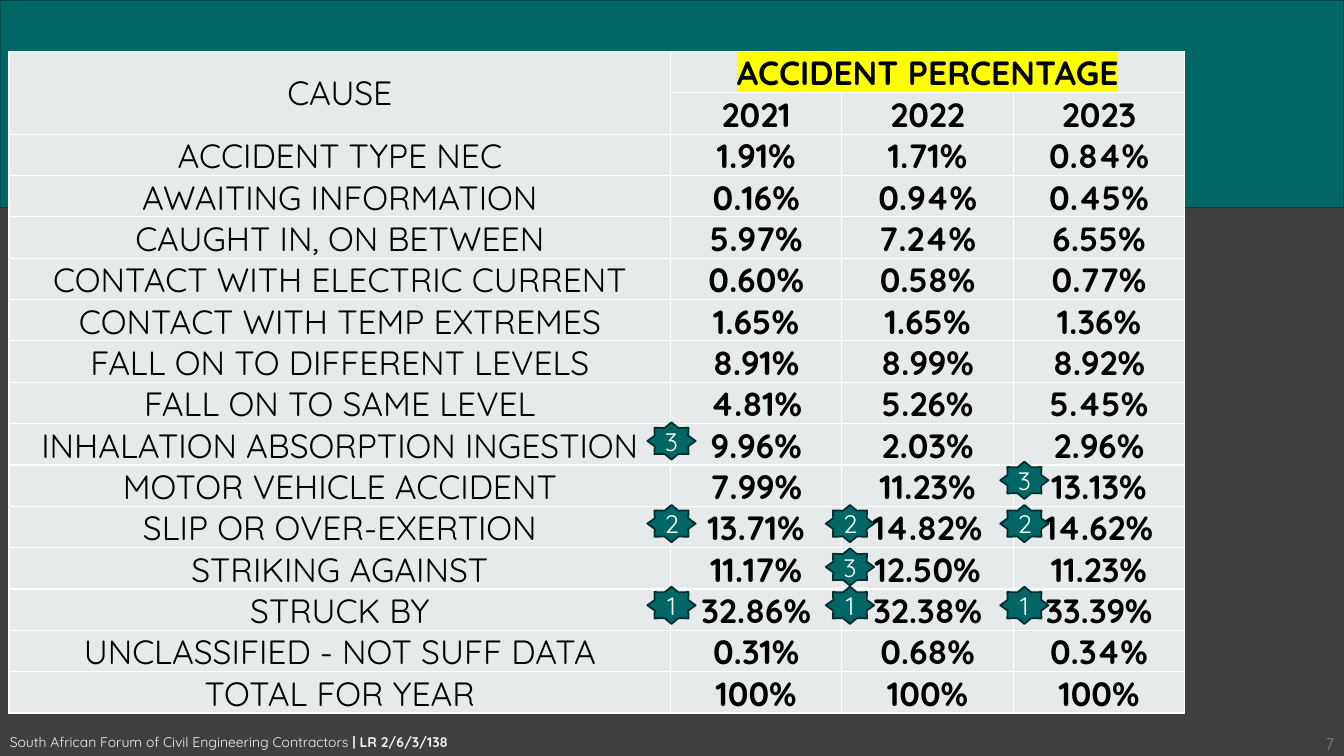
from typing import NamedTuple

from lxml.etree import SubElement
from pptx import Presentation
from pptx.dml.color import RGBColor
from pptx.enum.shapes import MSO_SHAPE
from pptx.enum.text import MSO_ANCHOR, PP_ALIGN
from pptx.oxml import parse_xml
from pptx.oxml.ns import nsdecls, qn
from pptx.util import Inches, Pt

FONT = "Quicksand"
TEAL = "006666"


class Cause(NamedTuple):
    label: str
    percentages: tuple[str, str, str]


class Badge(NamedTuple):
    rank: str
    left: float
    top: float


YEARS = ("2021", "2022", "2023")
CAUSES = [
    Cause("ACCIDENT TYPE NEC", ("1.91%", "1.71%", "0.84%")),
    Cause("AWAITING INFORMATION", ("0.16%", "0.94%", "0.45%")),
    Cause("CAUGHT IN, ON BETWEEN", ("5.97%", "7.24%", "6.55%")),
    Cause("CONTACT WITH ELECTRIC CURRENT", ("0.60%", "0.58%", "0.77%")),
    Cause("CONTACT WITH TEMP EXTREMES", ("1.65%", "1.65%", "1.36%")),
    Cause("FALL ON TO DIFFERENT LEVELS", ("8.91%", "8.99%", "8.92%")),
    Cause("FALL ON TO SAME LEVEL", ("4.81%", "5.26%", "5.45%")),
    Cause("INHALATION ABSORPTION INGESTION", ("9.96%", "2.03%", "2.96%")),
    Cause("MOTOR VEHICLE ACCIDENT", ("7.99%", "11.23%", "13.13%")),
    Cause("SLIP OR OVER-EXERTION", ("13.71%", "14.82%", "14.62%")),
    Cause("STRIKING AGAINST", ("11.17%", "12.50%", "11.23%")),
    Cause("STRUCK BY", ("32.86%", "32.38%", "33.39%")),
    Cause("UNCLASSIFIED - NOT SUFF DATA", ("0.31%", "0.68%", "0.34%")),
    Cause("TOTAL FOR YEAR", ("100%", "100%", "100%")),
]

# Tops of ranks 1, 2 and 3 in each year's column
BADGE_COLUMNS = {
    6.42: (5.82, 5.01, 4.19),
    8.19: (5.82, 5.01, 5.44),
    9.92: (5.82, 5.01, 4.58),
}
BADGES = [
    Badge(str(rank), left, top)
    for left, tops in BADGE_COLUMNS.items()
    for rank, top in enumerate(tops, start=1)
]


def color(value: str) -> RGBColor:
    return RGBColor.from_string(value)


def paint(shape, fill: str, line: str, width: float) -> None:
    shape.shadow.inherit = False
    shape.fill.solid()
    shape.fill.fore_color.rgb = color(fill)
    shape.line.color.rgb = color(line)
    shape.line.width = Pt(width)


def style_run(run, size: float, text_color: str, bold: bool = False) -> None:
    run.font.name = FONT
    run.font.size = Pt(size)
    run.font.bold = bold
    run.font.color.rgb = color(text_color)


def highlight(run, value: str) -> None:
    mark = parse_xml(f'<a:highlight {nsdecls("a")}><a:srgbClr val="{value}"/></a:highlight>')
    run.font._element.find(qn("a:latin")).addprevious(mark)


def add_borders(cell, value: str, width: float) -> None:
    properties = cell._tc.get_or_add_tcPr()
    for side in ("a:lnL", "a:lnR", "a:lnT", "a:lnB"):
        border = SubElement(properties, qn(side), w=str(Pt(width)))
        SubElement(SubElement(border, qn("a:solidFill")), qn("a:srgbClr"), val=value)


def fill_cell(cell, text: str, bold: bool) -> None:
    add_borders(cell, "FFFFFF", 1)
    cell.fill.solid()
    cell.fill.fore_color.rgb = color("E7EAEA")
    cell.vertical_anchor = MSO_ANCHOR.MIDDLE
    cell.margin_left = cell.margin_right = cell.margin_top = Inches(0.01)
    cell.margin_bottom = 0
    if text:
        paragraph = cell.text_frame.paragraphs[0]
        paragraph.text = text
        paragraph.alignment = PP_ALIGN.CENTER
        style_run(paragraph.runs[0], 24, "000000", bold)


def add_banner(slide) -> None:
    outline = [(0, 0), (0, 2.06), (2.18, 2.06), (2.6, 2.38), (2.65, 2.39),
               (2.7, 2.38), (3.11, 2.06), (13.33, 2.06)]
    builder = slide.shapes.build_freeform(Inches(13.33), 0)
    builder.add_line_segments([(Inches(x), Inches(y)) for x, y in outline], close=True)
    paint(builder.convert_to_shape(), TEAL, "003333", 0.75)


def add_footer(slide) -> None:
    footer = slide.shapes.add_textbox(Inches(0.0), Inches(7.23), Inches(4.93), Inches(0.28))
    footer.text_frame.word_wrap = True
    paragraph = footer.text_frame.paragraphs[0]
    paragraph.text = "South African Forum of Civil Engineering Contractors"
    reference = paragraph.add_run()
    reference.text = " | LR 2/6/3/138"
    style_run(paragraph.runs[0], 10, "F2F2F2")
    style_run(reference, 10, "F2F2F2", bold=True)


def add_page_number(slide) -> None:
    page_number = slide.shapes.add_textbox(Inches(12.17), Inches(6.95), Inches(1.16), Inches(0.54))
    frame = page_number.text_frame
    frame.word_wrap = True
    frame.vertical_anchor = MSO_ANCHOR.BOTTOM
    frame.margin_bottom = Inches(0.01)
    frame.text = "7"
    frame.paragraphs[0].alignment = PP_ALIGN.RIGHT
    style_run(frame.paragraphs[0].runs[0], 12, "808080")


def add_accident_table(slide) -> None:
    rows = [("CAUSE", "ACCIDENT PERCENTAGE", "", ""), ("", *YEARS)]
    rows += [(cause.label, *cause.percentages) for cause in CAUSES]
    table = slide.shapes.add_table(
        len(rows), 4, Inches(0.09), Inches(0.51), Inches(11.66), Inches(6.5)
    ).table
    table.first_row = table.horz_banding = False
    for column, width in zip(table.columns, (6.56, 1.7, 1.7, 1.7)):
        column.width = Inches(width)
    for row_index, texts in enumerate(rows):
        for column_index, text in enumerate(texts):
            fill_cell(table.cell(row_index, column_index), text, bold=column_index > 0)
    table.cell(0, 0).merge(table.cell(1, 0))
    table.cell(0, 1).merge(table.cell(0, 3))
    highlight(table.cell(0, 1).text_frame.paragraphs[0].runs[0], "FFFF00")


def add_badge(slide, badge: Badge) -> None:
    star = slide.shapes.add_shape(
        MSO_SHAPE.STAR_8_POINT, Inches(badge.left), Inches(badge.top), Inches(0.48), Inches(0.37)
    )
    paint(star, TEAL, "002D2D", 1.25)
    frame = star.text_frame
    frame.text = badge.rank
    frame.vertical_anchor = MSO_ANCHOR.MIDDLE
    frame.paragraphs[0].alignment = PP_ALIGN.CENTER
    style_run(frame.paragraphs[0].runs[0], 18, "FFFFFF")


def main() -> None:
    presentation = Presentation()
    presentation.slide_width = Inches(13.33)
    presentation.slide_height = Inches(7.5)
    slide = presentation.slides.add_slide(presentation.slide_layouts[6])
    slide.background.fill.solid()
    slide.background.fill.fore_color.rgb = color("3F3F3F")

    # Banner, footer and page number
    add_banner(slide)
    add_footer(slide)
    add_page_number(slide)

    # Accident causes by year, with the top three ranked
    add_accident_table(slide)
    for badge in BADGES:
        add_badge(slide, badge)

    presentation.save("out.pptx")


if __name__ == "__main__":
    main()
